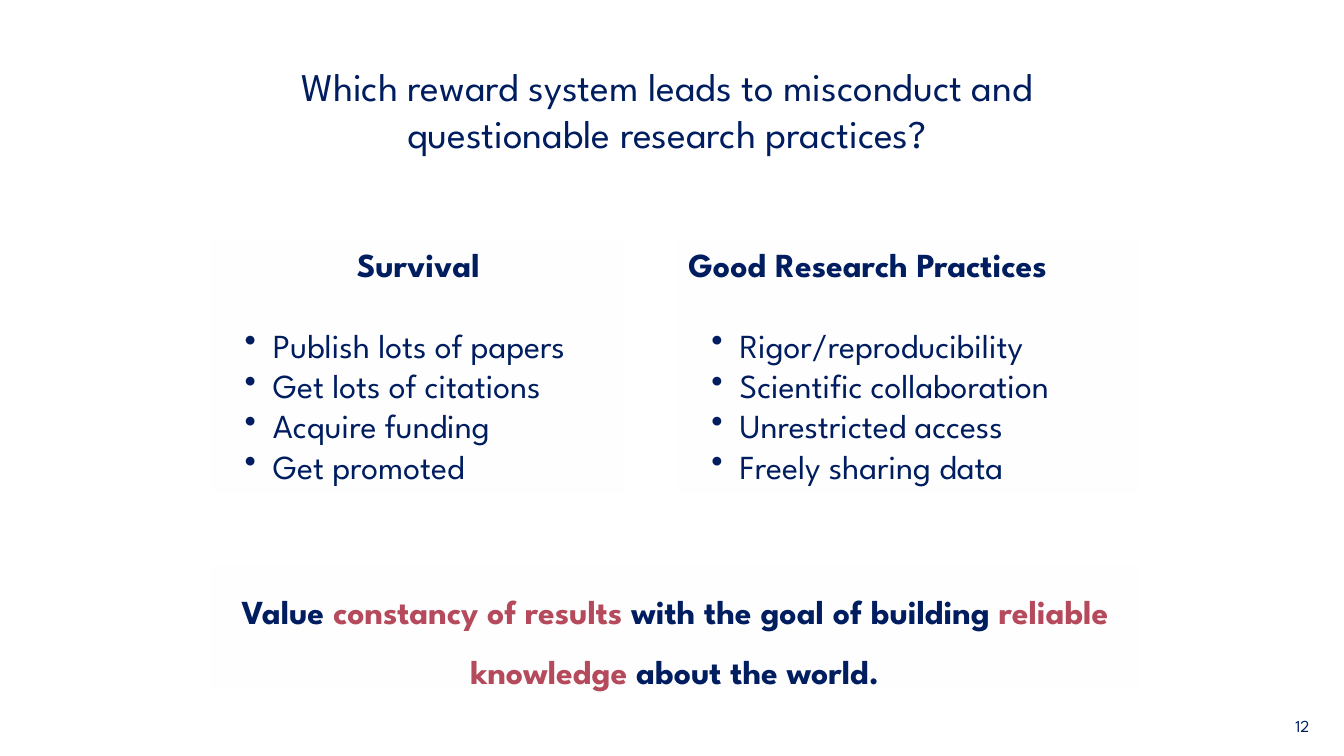
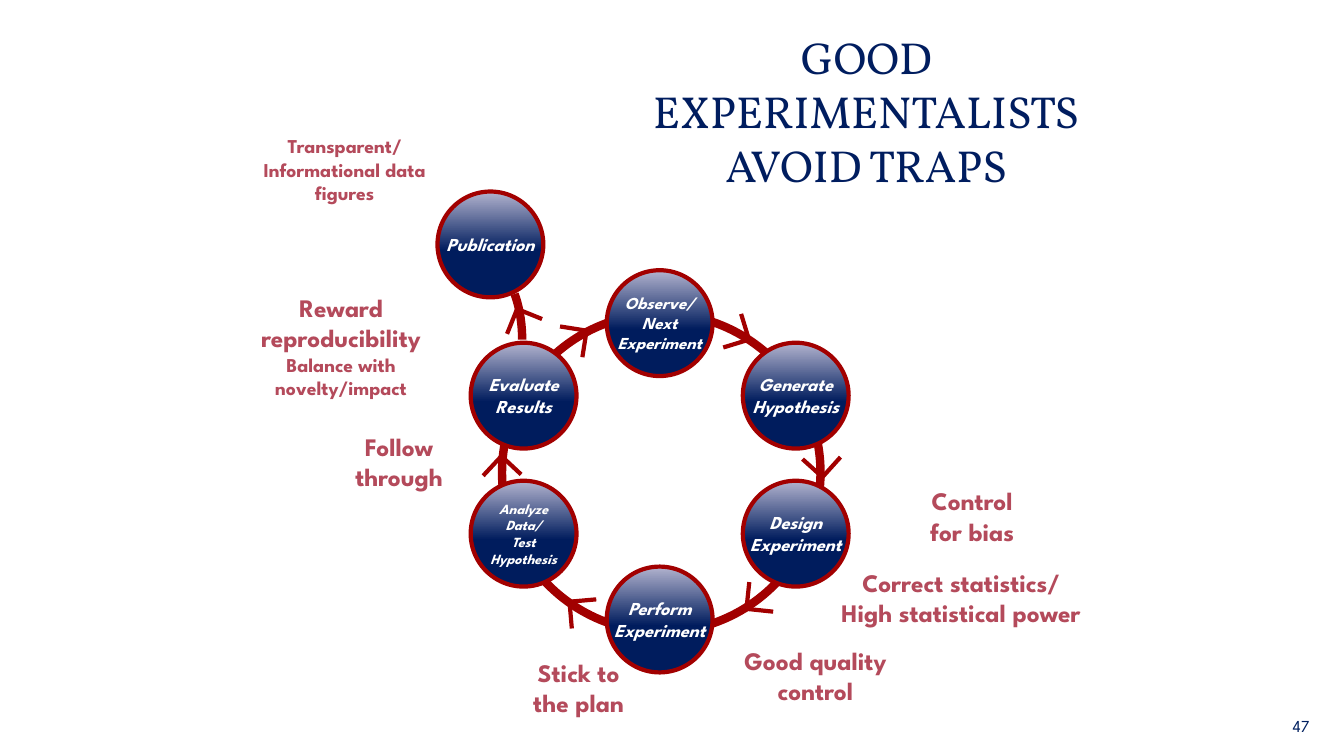
from math import cos, radians, sin

from lxml import etree
from pptx import Presentation
from pptx.dml.color import RGBColor
from pptx.enum.shapes import MSO_CONNECTOR, MSO_SHAPE
from pptx.enum.text import MSO_ANCHOR as ANCHOR, PP_ALIGN as ALIGN
from pptx.oxml.ns import qn
from pptx.util import Pt

COLORS = {
    "navy": "001D5F",
    "rose": "B44A5B",
    "red": "A20000",
    "panel": "FEFEFF",
    "node_dark": "001C5D",
    "node_light": "B3B4CF",
    "white": "FFFFFF",
    "page": "002060",
}
BODY_FONT, DISPLAY_FONT = "League Spartan", "Vollkorn"
BULLET_INDENT, BULLET_HANG = Pt(36.7), Pt(20.2)

NODE_SIZE = 75.6
RING = (358.6, 223.9, 227.5)  # left, top, diameter
AXIS, SPREAD = 471.2, 97.2
WING_LENGTH, WING_ANGLE = 19.2, 45

# Centre x, centre y, text size, lines
NODES = [
    (AXIS, 230.8, 12, ["Observe/", "Next", "Experiment"]),
    (AXIS, 442.5, 13, ["Perform", "Experiment"]),
    (AXIS + SPREAD, 381.2, 13, ["Design", "Experiment"]),
    (AXIS - SPREAD, 381.2, 10, ["Analyze", "Data/", "Test", "Hypothesis"]),
    (AXIS + SPREAD, 282.6, 13, ["Generate", "Hypothesis"]),
    (AXIS - SPREAD, 282.6, 13, ["Evaluate", "Results"]),
]
PUBLICATION = (350.3, 174.6, 13, ["Publication"])

# Tip x, tip y, heading in degrees clockwise from the right
ARROWHEADS = [
    (535, 242.6, 28),
    (587.5, 340.8, 87),
    (358.2, 325.8, 268),
    (419, 236.2, 324),
    (406.8, 429.8, 220),
    (533.2, 434.9, 141),
    (369.4, 220.7, 247),
]

# Left, top, width, height, lines as (text, size)
TRAPS = [
    (655.2, 343.4, 78.5, 51, [("Control", 18), ("for bias", 18)]),
    (586.1, 401.8, 200.9, 51,
     [("Correct statistics/", 18), ("High statistical power", 18)]),
    (517.7, 457.2, 129.6, 51, [("Good quality", 18), ("control", 18)]),
    (172.8, 205.2, 141.8, 85,
     [("Reward", 18), ("reproducibility", 18),
      ("Balance with", 14), ("novelty/impact", 14)]),
    (175.7, 92.2, 141.1, 58.3,
     [("Transparent/", 14), ("Informational data", 14), ("figures", 14)]),
    (369, 465.8, 88.6, 51, [("Stick to", 18), ("the plan", 18)]),
    (242.6, 304.6, 85, 51, [("Follow", 18), ("through", 18)]),
]


def color(name):
    return RGBColor.from_string(COLORS[name])


def points(*lengths):
    return [Pt(round(length, 2)) for length in lengths]


def add_run(paragraph, text, size, ink="navy", bold=False, italic=False,
            font=BODY_FONT):
    run = paragraph.add_run()
    run.text = text
    run.font.size = Pt(size)
    run.font.name = font
    run.font.bold = bold
    run.font.italic = italic
    run.font.color.rgb = color(ink)


def add_paragraph(frame, align=ALIGN.CENTER):
    """Return the untouched first paragraph, or a new one."""
    first = frame.paragraphs[0]
    paragraph = frame.add_paragraph() if first.runs else first
    paragraph.alignment = align
    return paragraph


def add_frame(slide, box, wrap=True, fill=None):
    text_box = slide.shapes.add_textbox(*points(*box))
    if fill:
        text_box.fill.solid()
        text_box.fill.fore_color.rgb = color(fill)
    text_box.text_frame.word_wrap = wrap
    return text_box.text_frame


def add_title(slide, box, text, size, font=BODY_FONT):
    paragraph = add_paragraph(add_frame(slide, box))
    add_run(paragraph, text, size, font=font)


def add_page_number(slide, number):
    frame = add_frame(slide, (774.7, 504, 167.8, 28.8))
    frame.vertical_anchor = ANCHOR.MIDDLE
    add_run(add_paragraph(frame, ALIGN.RIGHT), str(number), 12, "page")


def make_bullet(paragraph):
    properties = paragraph._p.get_or_add_pPr()
    properties.set("marL", str(BULLET_INDENT))
    properties.set("indent", str(-BULLET_HANG))
    etree.SubElement(properties, qn("a:buChar")).set("char", "•")


def add_reward_panel(slide, left, width, heading, heading_align, rewards):
    frame = add_frame(slide, (left, 170.6, width, 181.4), fill="panel")
    add_run(add_paragraph(frame, heading_align), heading, 24, bold=True)
    for index, reward in enumerate(rewards):
        paragraph = add_paragraph(frame, ALIGN.LEFT)
        make_bullet(paragraph)
        if index == 0:
            paragraph.space_before = Pt(29)
        add_run(paragraph, reward, 24)


def add_outline(slide, preset, box, width):
    outline = slide.shapes.add_shape(preset, *points(*box))
    outline.shadow.inherit = False
    outline.fill.background()
    outline.line.color.rgb = color("red")
    outline.line.width = Pt(width)
    return outline


def add_node(slide, center_x, center_y, size, lines):
    half = NODE_SIZE / 2
    box = (center_x - half, center_y - half, NODE_SIZE, NODE_SIZE)
    node = add_outline(slide, MSO_SHAPE.OVAL, box, 3)
    node.fill.gradient()
    node.fill.gradient_angle = 90
    shades = ((0.44, "node_dark"), (1, "node_light"))
    for stop, (position, shade) in zip(node.fill.gradient_stops, shades):
        stop.position = position
        stop.color.rgb = color(shade)
    frame = node.text_frame
    frame.word_wrap = False
    frame.vertical_anchor = ANCHOR.MIDDLE
    frame.margin_left = frame.margin_right = 0
    frame.margin_top = frame.margin_bottom = 0
    for line in lines:
        add_run(add_paragraph(frame), line, size, "white", True, True)


def add_arrowhead(slide, tip_x, tip_y, heading):
    """Draw two wings that trail back from the tip."""
    for side in (-WING_ANGLE, WING_ANGLE):
        angle = radians(heading + 180 + side)
        wing_x = tip_x + WING_LENGTH * cos(angle)
        wing_y = tip_y + WING_LENGTH * sin(angle)
        wing = slide.shapes.add_connector(
            MSO_CONNECTOR.STRAIGHT, *points(wing_x, wing_y, tip_x, tip_y))
        wing.line.color.rgb = color("red")
        wing.line.width = Pt(3)
        etree.SubElement(wing._element.spPr, qn("a:effectLst"))


def add_trap(slide, left, top, width, height, lines):
    frame = add_frame(slide, (left, top, width, height), wrap=False)
    for text, size in lines:
        add_run(add_paragraph(frame), text, size, "rose", bold=True)


def build_reward_slide(slide):
    add_reward_panel(
        slide, 151.2, 295.2, "Survival", ALIGN.CENTER,
        ["Publish lots of papers", "Get lots of citations",
         "Acquire funding", "Get promoted"])
    add_reward_panel(
        slide, 484.6, 328.3, "Good Research Practices", ALIGN.LEFT,
        ["Rigor/reproducibility", "Scientific collaboration",
         "Unrestricted access", "Freely sharing data"])
    add_title(slide, (151.2, 41, 650.2, 74.9),
              "Which reward system leads to misconduct and "
              "questionable research practices?", 28)
    values = add_frame(slide, (151.2, 403.9, 661.7, 88.6), fill="panel")
    paragraph = add_paragraph(values)
    paragraph.line_spacing = 1.5
    for text, ink in (("Value ", "navy"),
                      ("constancy of results", "rose"),
                      (" with the goal of building ", "navy"),
                      ("reliable knowledge", "rose"),
                      (" about the world.", "navy")):
        add_run(paragraph, text, 24, ink, bold=True)
    add_page_number(slide, 12)


def build_cycle_slide(slide):
    left, top, diameter = RING
    add_outline(slide, MSO_SHAPE.OVAL, (left, top, diameter, diameter), 6)
    for node in [*NODES, PUBLICATION]:
        add_node(slide, *node)
    exit_arc = add_outline(slide, MSO_SHAPE.ARC, (308.2, 183.6, 64.8, 118.1), 6)
    exit_arc.adjustments[0] = 185.74
    exit_arc.adjustments[1] = 0
    for arrowhead in ARROWHEADS:
        add_arrowhead(slide, *arrowhead)
    for trap in TRAPS:
        add_trap(slide, *trap)
    add_title(slide, (417.6, 18, 402.5, 123.8),
              "GOOD EXPERIMENTALISTS AVOID TRAPS", 32, DISPLAY_FONT)
    add_page_number(slide, 47)


def main():
    deck = Presentation()
    deck.slide_width, deck.slide_height = Pt(960), Pt(540)
    blank = deck.slide_layouts[6]
    for build in (build_reward_slide, build_cycle_slide):
        build(deck.slides.add_slide(blank))
    deck.save("out.pptx")


if __name__ == "__main__":
    main()
